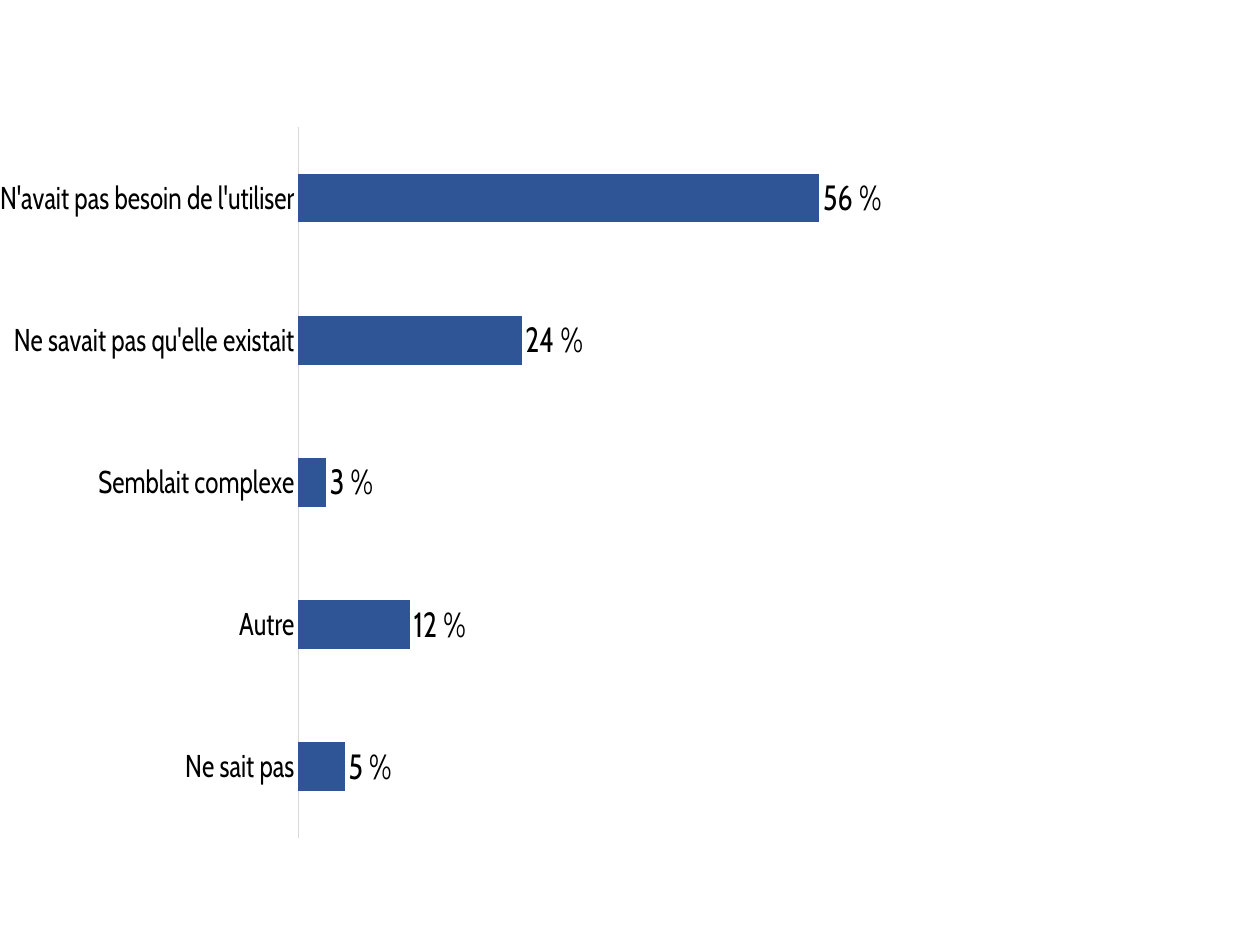
from dataclasses import dataclass

from pptx import Presentation
from pptx.chart.chart import Chart
from pptx.chart.data import CategoryChartData
from pptx.dml.color import RGBColor
from pptx.enum.chart import XL_CHART_TYPE as ChartType
from pptx.enum.chart import XL_LABEL_POSITION as LabelPosition
from pptx.enum.chart import XL_TICK_MARK as TickMark
from pptx.oxml import parse_xml
from pptx.oxml.ns import nsdecls, qn
from pptx.util import Pt

COLORS = {"text": "000000", "bar": "2F5597", "axis": "D9D9D9"}
FONT = "Cabin"


@dataclass
class Reason:
    label: str
    percent: int


REASONS = [
    Reason("N'avait pas besoin de l'utiliser", 56),
    Reason("Ne savait pas qu'elle existait", 24),
    Reason("Semblait complexe", 3),
    Reason("Autre", 12),
    Reason("Ne sait pas", 5),
]


def style_font(font, size: float, color: str = "text") -> None:
    font.name = FONT
    font.size = Pt(size)
    font.bold = False
    font.color.rgb = RGBColor.from_string(COLORS[color])


def write_text(frame, text: str, *, size: float, color: str = "text") -> None:
    span = frame.paragraphs[0].add_run()
    span.text = text
    style_font(span.font, size, color)


def place_plot(chart: Chart, **fractions: float) -> None:
    plot_area = chart.plots[0]._element.getparent()
    for old_layout in plot_area.findall(qn("c:layout")):
        plot_area.remove(old_layout)
    sizes = "".join(f'<c:{key} val="{value}"/>' for key, value in fractions.items())
    plot_area.insert(0, parse_xml(
        f'<c:layout {nsdecls("c")}><c:manualLayout><c:layoutTarget val="inner"/>'
        f'<c:xMode val="edge"/><c:yMode val="edge"/>{sizes}'
        "</c:manualLayout></c:layout>"))


def style_axes(chart: Chart) -> None:
    categories = chart.category_axis
    categories.reverse_order = True
    categories.major_tick_mark = TickMark.NONE
    categories.minor_tick_mark = TickMark.NONE
    categories.has_major_gridlines = False
    categories.format.line.width = Pt(0.75)
    categories.format.line.color.rgb = RGBColor.from_string(COLORS["axis"])
    style_font(categories.tick_labels.font, 18)

    values = chart.value_axis
    values.minimum_scale, values.maximum_scale = 0, 0.6
    values.has_major_gridlines = False
    values.tick_labels.number_format = "0%"
    values.tick_labels.number_format_is_linked = False
    values.visible = False


def style_bars(chart: Chart, reasons: list[Reason]) -> None:
    plot = chart.plots[0]
    plot.gap_width = 191
    plot.vary_by_categories = False
    bars = plot.series[0]
    bars.format.fill.solid()
    bars.format.fill.fore_color.rgb = RGBColor.from_string(COLORS["bar"])

    labels = bars.data_labels
    labels.show_value = True
    labels.number_format = "0%"
    labels.number_format_is_linked = False
    labels.position = LabelPosition.OUTSIDE_END
    style_font(labels.font, 20)
    for index, reason in enumerate(reasons):
        label = bars.points[index].data_label
        write_text(label.text_frame, f"{reason.percent} %", size=20)
        label.position = LabelPosition.OUTSIDE_END


def add_reason_chart(page, reasons: list[Reason]) -> None:
    chart_data = CategoryChartData(number_format="0%")
    chart_data.categories = [reason.label for reason in reasons]
    chart_data.add_series("Series 1", [reason.percent / 100 for reason in reasons])
    chart = page.shapes.add_chart(
        ChartType.BAR_CLUSTERED, Pt(0), Pt(54.72), Pt(711.36), Pt(446.4), chart_data
    ).chart
    chart.has_title = False
    chart.has_legend = False
    style_font(chart.font, 10)
    style_axes(chart)
    style_bars(chart, reasons)
    place_plot(chart, x=0, y=0.04, w=0.59, h=0.91)


def main() -> None:
    deck = Presentation()
    deck.slide_width, deck.slide_height = Pt(720), Pt(540)
    page = deck.slides.add_slide(deck.slide_layouts[6])
    add_reason_chart(page, REASONS)
    deck.save("out.pptx")


if __name__ == "__main__":
    main()
